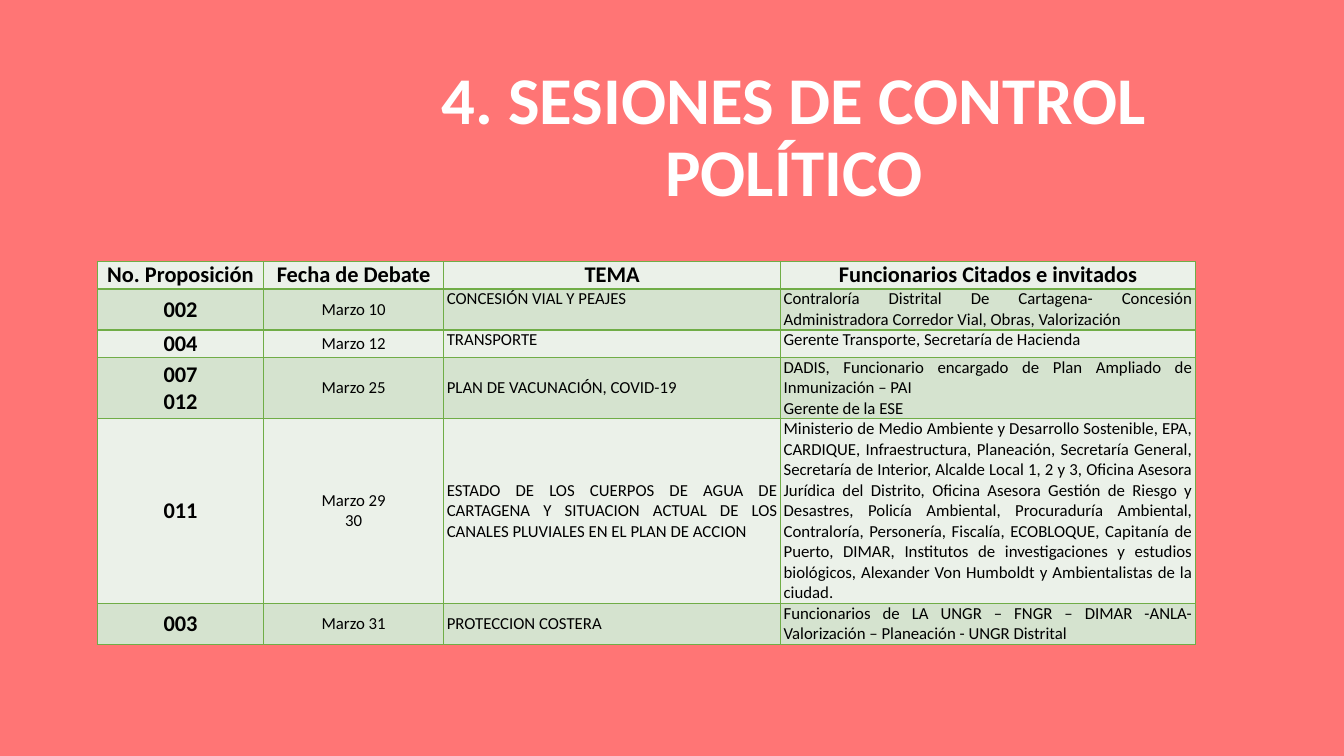
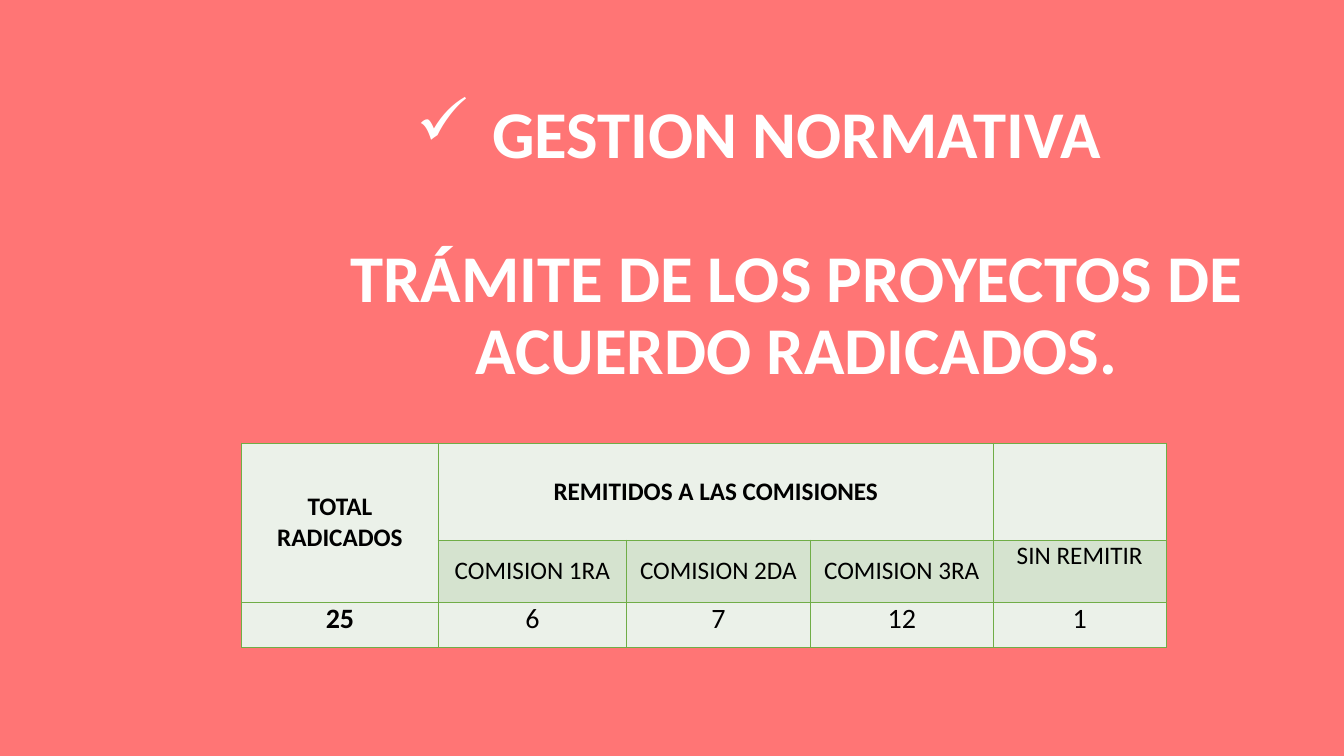
import pptx
import pptx.dml.color
import pptx.enum.text
import pptx.oxml
import pptx.oxml.ns
import pptx.util
from lxml import etree

Pt = pptx.util.Pt
Align = pptx.enum.text.PP_ALIGN
Anchor = pptx.enum.text.MSO_ANCHOR

COLORS = {
    "background": "FF7575",
    "title": "FFFFFF",
    "text": "000000",
    "light": "EBF1E9",
    "dark": "D5E3CF",
    "border": "70AD47",
}
FONT = "Calibri"
TITLE_SIZE = 47.7
TITLE_LINE = 51.5

DEBATES = [
    ("002", "Marzo 10", "CONCESIÓN VIAL Y PEAJES",
     "Contraloría Distrital De Cartagena- Concesión Administradora Corredor Vial, "
     "Obras, Valorización"),
    ("004", "Marzo 12", "TRANSPORTE", "Gerente Transporte, Secretaría de Hacienda"),
    ("007\n012", "Marzo 25", "PLAN DE VACUNACIÓN, COVID-19",
     "DADIS, Funcionario encargado de Plan Ampliado de Inmunización – PAI\n"
     "Gerente de la ESE"),
    ("011", "Marzo 29\n30",
     "ESTADO DE LOS CUERPOS DE AGUA DE CARTAGENA Y SITUACION ACTUAL DE LOS "
     "CANALES PLUVIALES EN EL PLAN DE ACCION",
     "Ministerio de Medio Ambiente y Desarrollo Sostenible, EPA, CARDIQUE, "
     "Infraestructura, Planeación, Secretaría General, Secretaría de Interior, "
     "Alcalde Local 1, 2 y 3, Oficina Asesora Jurídica del Distrito, Oficina Asesora "
     "Gestión de Riesgo y Desastres, Policía Ambiental, Procuraduría Ambiental, "
     "Contraloría, Personería, Fiscalía, ECOBLOQUE, Capitanía de Puerto, DIMAR, "
     "Institutos de investigaciones y estudios biológicos, Alexander Von Humboldt y "
     "Ambientalistas de la ciudad."),
    ("003", "Marzo 31", "PROTECCION COSTERA",
     "Funcionarios de LA UNGR – FNGR – DIMAR -ANLA- Valorización – Planeación - "
     "UNGR Distrital"),
]
DEBATE_HEADER = ("No. Proposición", "Fecha de Debate", "TEMA",
                 "Funcionarios Citados e invitados")
COMMISSIONS = [
    ("TOTAL RADICADOS", "REMITIDOS A LAS COMISIONES", "", "", ""),
    ("", "COMISION 1RA", "COMISION 2DA", "COMISION 3RA", "SIN REMITIR"),
    ("25", "6", "7", "12", "1"),
]


def rgb(name):
    return pptx.dml.color.RGBColor.from_string(COLORS[name])


def format_font(font, size, color, bold):
    font.name = FONT
    font.size = Pt(size)
    font.bold = bold
    font.color.rgb = rgb(color)


def add_title_slide(presentation, box, lines, space_below, bullet=None):
    slide = presentation.slides.add_slide(presentation.slide_layouts[5])
    title = slide.shapes.title
    title.left, title.top, title.width, title.height = map(Pt, box)
    frame = title.text_frame
    frame.text = "\n".join(lines)
    frame.word_wrap = True
    frame.auto_size = pptx.enum.text.MSO_AUTO_SIZE.NONE
    frame.vertical_anchor = Anchor.MIDDLE
    frame.margin_bottom = Pt(3.6 + space_below)
    for index, paragraph in enumerate(frame.paragraphs):
        paragraph.alignment = Align.CENTER
        paragraph.line_spacing = 0.9
        if index:
            paragraph.space_before = Pt(TITLE_LINE)
        if bullet:
            properties = paragraph._p.get_or_add_pPr()
            properties.set("marL", str(Pt(54)))
            properties.set("indent", str(0 if index else -Pt(54)))
            if not index:
                mark = etree.SubElement(properties, pptx.oxml.ns.qn("a:buChar"))
                mark.set("char", bullet)
        format_font(paragraph.font, TITLE_SIZE, "title", True)
    return slide


def add_borders(cell):
    properties = cell._tc.get_or_add_tcPr()
    for side in ("lnL", "lnR", "lnT", "lnB"):
        properties.append(pptx.oxml.parse_xml(
            f'<a:{side} {pptx.oxml.ns.nsdecls("a")} w="{Pt(1)}"><a:solidFill>'
            f'<a:srgbClr val="{COLORS["border"]}"/></a:solidFill></a:{side}>'))


def add_grid(slide, left, top, widths, heights, side_margin):
    table = slide.shapes.add_table(len(heights), len(widths), Pt(left), Pt(top),
                                   Pt(sum(widths)), Pt(sum(heights))).table
    table.first_row = table.horz_banding = False
    for column, width in zip(table.columns, widths):
        column.width = Pt(width)
    for row, height in zip(table.rows, heights):
        row.height = Pt(height)
    for cell in table.iter_cells():
        cell.margin_left = cell.margin_right = Pt(side_margin)
        cell.margin_top = cell.margin_bottom = 0
        add_borders(cell)
    return table


def fill_cell(cell, text, fill, size, bold, anchor=Anchor.MIDDLE, alignment=Align.CENTER):
    cell.fill.solid()
    cell.fill.fore_color.rgb = rgb(fill)
    cell.vertical_anchor = anchor
    cell.text = text
    for paragraph in cell.text_frame.paragraphs:
        paragraph.alignment = alignment
        format_font(paragraph.font, size, "text", bold)


def add_debate_table(slide, left, top):
    table = add_grid(slide, left, top, (118.7, 128.7, 240.6, 296.5),
                     (19.5, 29.2, 19.5, 43.5, 131.5, 29.2), 2.2)
    for row, texts in enumerate([DEBATE_HEADER] + DEBATES):
        for column, text in enumerate(texts):
            is_heading = row == 0 or column == 0
            is_prose = row > 0 and column >= 2
            is_top = is_prose and (column == 3 or row <= 2)
            fill_cell(table.cell(row, column), text, "dark" if row % 2 else "light",
                      16 if is_heading else 12, is_heading,
                      Anchor.TOP if is_top else Anchor.MIDDLE,
                      Align.JUSTIFY if is_prose else Align.CENTER)


def add_commission_table(slide, left, top):
    table = add_grid(slide, left, top, (140.5, 134.5, 131.3, 130.7, 123.5),
                     (69.3, 44.3, 32.1), 5)
    table.cell(0, 0).merge(table.cell(1, 0))
    table.cell(0, 1).merge(table.cell(0, 3))
    for row, texts in enumerate(COMMISSIONS):
        for column, text in enumerate(texts):
            is_top = row == 2 or (row, column) == (1, 4)
            fill_cell(table.cell(row, column), text,
                      "dark" if row == 1 and column else "light",
                      20 if row == 2 else 18, row == 0 or column == 0,
                      Anchor.TOP if is_top else Anchor.MIDDLE)


def main():
    presentation = pptx.Presentation()
    presentation.slide_width = Pt(960)
    presentation.slide_height = Pt(540)
    background = presentation.slide_master.background.fill
    background.solid()
    background.fore_color.rgb = rgb("background")

    debates = add_title_slide(presentation, (290, 72.7, 554.5, 104.4),
                              ["4. SESIONES DE CONTROL POLÍTICO"], TITLE_LINE)
    add_debate_table(debates, 69.6, 186.8)

    projects = add_title_slide(
        presentation, (152.6, 85.7, 779, 281.5),
        ["GESTION NORMATIVA", "TRÁMITE DE LOS PROYECTOS DE ACUERDO RADICADOS."],
        2 * TITLE_LINE, "✓")
    add_commission_table(projects, 172.6, 316.6)
    presentation.save("out.pptx")


if __name__ == "__main__":
    main()
